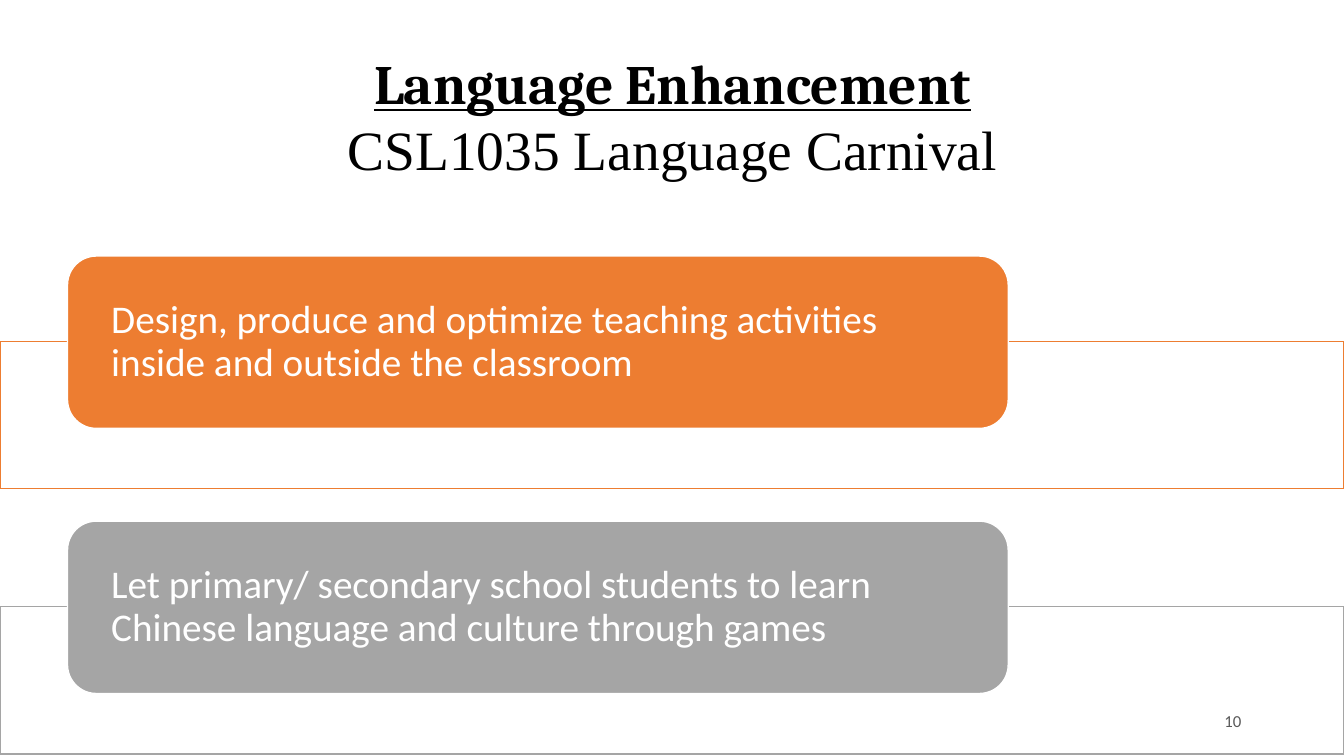
import pptx
import pptx.dml.color
import pptx.enum.shapes
import pptx.enum.text
import pptx.oxml.ns
import pptx.util
from lxml import etree

Inches = pptx.util.Inches
Pt = pptx.util.Pt
Shape = pptx.enum.shapes.MSO_SHAPE
Align = pptx.enum.text.PP_ALIGN

COLORS = {
    "white": "FFFFFF",
    "black": "000000",
    "orange": "ED7D31",
    "gray": "A5A5A5",
    "page": "595959",
}

GOALS = [
    ("orange", "Design, produce and optimize teaching activities "
               "inside and outside the classroom"),
    ("gray", "Let primary/ secondary school students to learn "
             "Chinese language and culture through games"),
]


def rgb(name):
    return pptx.dml.color.RGBColor.from_string(COLORS[name])


class CourseSlide:
    """Holds the text style and the slide being built."""

    body_font = "Calibri"

    def __init__(self, presentation):
        self.slide = presentation.slides.add_slide(presentation.slide_layouts[5])

    def format_run(self, run, size, color, font=body_font, bold=False, underline=False):
        run.font.name = font
        run.font.size = Pt(size)
        run.font.color.rgb = rgb(color)
        run.font.bold = bold
        run.font.underline = underline

    def prepare_frame(self, frame, side_inset, end_inset):
        frame.word_wrap = True
        frame.auto_size = pptx.enum.text.MSO_AUTO_SIZE.NONE
        frame.vertical_anchor = pptx.enum.text.MSO_ANCHOR.MIDDLE
        frame.margin_left = frame.margin_right = Inches(side_inset)
        frame.margin_top = frame.margin_bottom = Inches(end_inset)

    def title(self, heading, course):
        title = self.slide.shapes.title
        title.left, title.top = Inches(0.33), Inches(0.42)
        title.width, title.height = Inches(12.68), Inches(1.45)
        frame = title.text_frame
        frame.text = f"{heading}\v{course}"
        self.prepare_frame(frame, 0.1, 0.05)
        paragraph = frame.paragraphs[0]
        paragraph.alignment = Align.CENTER
        heading_run, course_run = paragraph.runs
        self.format_run(heading_run, 39.6, "black", "Cambria", True, True)
        self.format_run(course_run, 39.6, "black", "Times New Roman")

    def box(self, kind, left, top, width, height, fill, line):
        box = self.slide.shapes.add_shape(
            kind, Inches(left), Inches(top), Inches(width), Inches(height))
        box.shadow.inherit = False
        box.fill.solid()
        box.fill.fore_color.rgb = rgb(fill)
        box.line.color.rgb = rgb(line)
        box.line.width = Pt(1)
        return box

    def goal(self, top, color, text):
        """Draw a full-width frame with a filled label overlapping its top edge."""
        band = self.box(Shape.RECTANGLE, 0, top + 0.85, 13.33, 1.46, "white", color)
        fill_color = band.fill._xPr.find(".//" + pptx.oxml.ns.qn("a:srgbClr"))
        etree.SubElement(fill_color, pptx.oxml.ns.qn("a:alpha"), val="90000")

        label = self.box(Shape.ROUNDED_RECTANGLE, 0.67, top, 9.33, 1.71, color, "white")
        frame = label.text_frame
        frame.text = text
        self.prepare_frame(frame, 0.35, 0)
        paragraph = frame.paragraphs[0]
        paragraph.alignment = Align.LEFT
        paragraph.line_spacing = 0.9
        self.format_run(paragraph.runs[0], 28, "white")

    def page_number(self, number):
        box = self.slide.shapes.add_textbox(
            Inches(8.83), Inches(6.95), Inches(3.58), Inches(0.4))
        frame = box.text_frame
        frame.text = str(number)
        self.prepare_frame(frame, 0.1, 0.05)
        paragraph = frame.paragraphs[0]
        paragraph.alignment = Align.RIGHT
        self.format_run(paragraph.runs[0], 12, "page")


def main():
    presentation = pptx.Presentation()
    presentation.slide_width = Inches(13.33)
    presentation.slide_height = Inches(7.5)

    course = CourseSlide(presentation)
    course.title("Language Enhancement", "CSL1035 Language Carnival")
    for index, (color, text) in enumerate(GOALS):
        course.goal(2.54 + index * 2.63, color, text)
    course.page_number(10)

    presentation.save("out.pptx")


if __name__ == "__main__":
    main()
